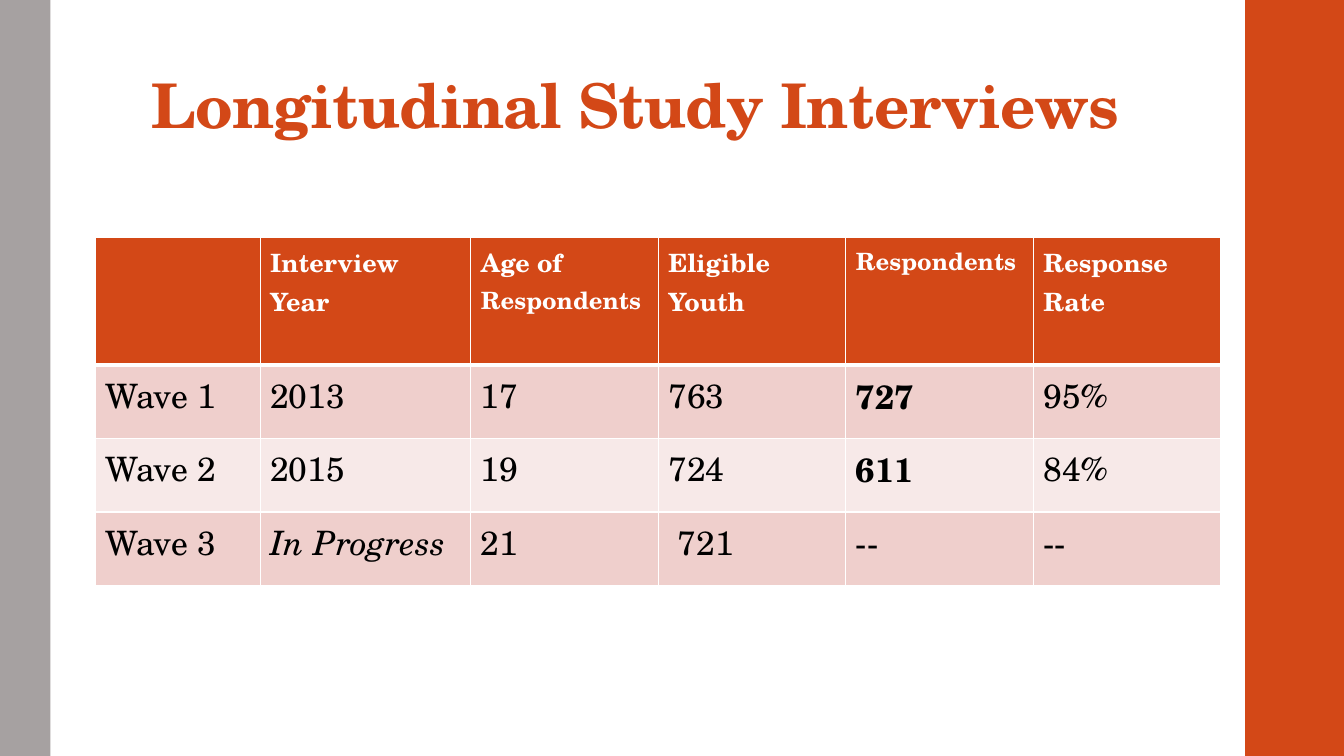
from lxml.etree import SubElement
from pptx import Presentation
from pptx.dml.color import RGBColor
from pptx.enum.shapes import MSO_SHAPE
from pptx.enum.text import MSO_ANCHOR, PP_ALIGN
from pptx.oxml.ns import qn
from pptx.util import Inches, Pt

FONT = "TeX Gyre Schola"
ORANGE = RGBColor(0xD3, 0x48, 0x17)
GRAY = RGBColor(0xA6, 0xA1, 0xA1)
WHITE = RGBColor(0xFF, 0xFF, 0xFF)
BLACK = RGBColor(0, 0, 0)
ROSE = RGBColor(0xEF, 0xCF, 0xCC)
PALE_ROSE = RGBColor(0xF7, 0xE9, 0xE8)

# Content
TITLE = "Longitudinal Study Interviews"
HEADER = ["", "Interview Year", "Age of Respondents", "Eligible Youth",
          "Respondents", "Response Rate"]
WAVES = [
    ["Wave 1", "2013", "17", "763", "727", "95%"],
    ["Wave 2", "2015", "19", "724", "611", "84%"],
    ["Wave 3", "In Progress", "21", " 721", "--", "--"],
]
LONG_WORD = "Respondents"  # set smaller so that it fits its column
BOLD = {"727", "611"}
ITALIC = {"In Progress"}
SIDE_BANDS = [(12.35, 1, ORANGE), (0, 0.5, GRAY)]  # left, width, colour
COLUMN_WIDTHS = [1.63, 2.09] + [1.86] * 4
ROW_HEIGHTS = [1.26] + [0.73] * len(WAVES)


def style(font, size, color, bold=False, italic=False):
    font.name, font.size = FONT, Pt(size)
    font.bold, font.italic = bold, italic
    font.color.rgb = color


def set_borders(cell, top, bottom):
    properties = cell._tc.get_or_add_tcPr()
    widths = [("a:lnL", 1), ("a:lnR", 1), ("a:lnT", top), ("a:lnB", bottom)]
    for position, (tag, width) in enumerate(widths):
        line = SubElement(properties, qn(tag), w=str(Pt(width)))
        solid = SubElement(line, qn("a:solidFill"))
        SubElement(solid, qn("a:srgbClr"), val=str(WHITE))
        properties.insert(position, line)


presentation = Presentation()
presentation.slide_width, presentation.slide_height = Inches(13.33), Inches(7.5)
slide = presentation.slides.add_slide(presentation.slide_layouts[5])

# Side bands
for left, width, color in SIDE_BANDS:
    band = slide.shapes.add_shape(MSO_SHAPE.RECTANGLE, Inches(left), 0,
                                  Inches(width), presentation.slide_height)
    band.shadow.inherit = False
    band.fill.solid()
    band.fill.fore_color.rgb = color
    band.line.fill.background()

# Title
title = slide.shapes.title
title.left, title.top = Inches(1.4), Inches(0.58)
title.width, title.height = Inches(10.6), Inches(0.88)
title.text = TITLE
frame = title.text_frame
frame.vertical_anchor = MSO_ANCHOR.BOTTOM
frame.margin_left = frame.margin_right = Inches(0.1)
frame.margin_top, frame.margin_bottom = Inches(0.03), Inches(0.05)
heading = frame.paragraphs[0]
heading.alignment = PP_ALIGN.LEFT
heading.line_spacing = 0.9
style(heading.font, 44, ORANGE, bold=True)
heading.runs[0]._r.get_or_add_rPr().set("spc", "-50")

# Interview table
table = slide.shapes.add_table(
    len(ROW_HEIGHTS), len(COLUMN_WIDTHS), Inches(0.95), Inches(2.36),
    Inches(sum(COLUMN_WIDTHS)), Inches(sum(ROW_HEIGHTS))).table
for column, width in zip(table.columns, COLUMN_WIDTHS):
    column.width = Inches(width)
for row, height in zip(table.rows, ROW_HEIGHTS):
    row.height = Inches(height)

for r, texts in enumerate([HEADER] + WAVES):
    is_header = r == 0
    for c, text in enumerate(texts):
        cell = table.cell(r, c)
        cell.fill.solid()
        cell.fill.fore_color.rgb = (
            ORANGE if is_header else ROSE if r % 2 else PALE_ROSE)
        set_borders(cell, top=3 if r == 1 else 1, bottom=3 if is_header else 1)
        paragraph = cell.text_frame.paragraphs[0]
        if not is_header:
            paragraph.text = text
            style(paragraph.font, 24, BLACK, text in BOLD, text in ITALIC)
            continue
        style(paragraph.font, 18, WHITE, bold=True)
        before, long_word, _ = text.partition(LONG_WORD)
        for part in filter(None, (before, long_word)):
            run = paragraph.add_run()
            run.text = part
            if part == LONG_WORD:
                run.font.size = Pt(17)

presentation.save("out.pptx")
